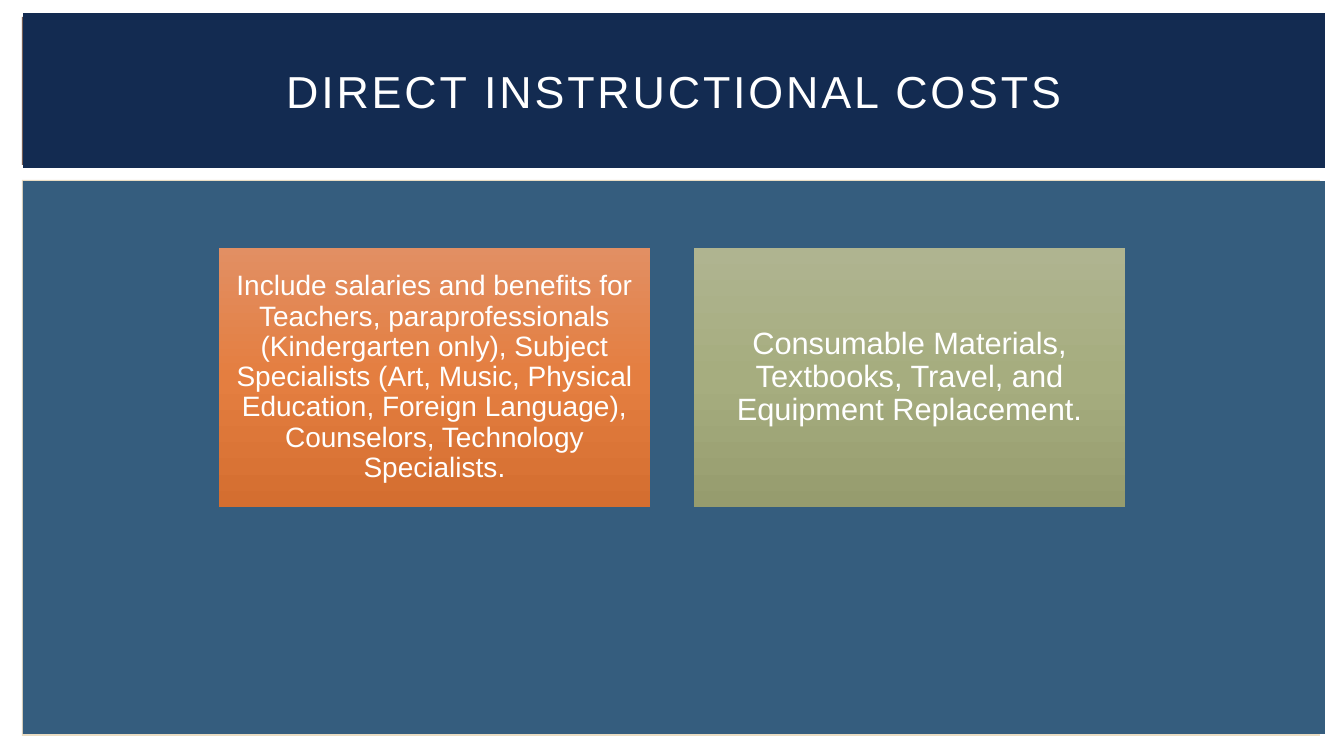
from copy import deepcopy

from pptx import Presentation
from pptx.dml.color import RGBColor
from pptx.enum.shapes import MSO_SHAPE
from pptx.enum.text import MSO_ANCHOR, MSO_AUTO_SIZE, PP_ALIGN
from pptx.util import Pt

RECT = MSO_SHAPE.RECTANGLE
MIDDLE = MSO_ANCHOR.MIDDLE
CENTER = PP_ALIGN.CENTER
NO_FIT = MSO_AUTO_SIZE.NONE

# Content
TITLE = "DIRECT INSTRUCTIONAL COSTS"
CARDS = [
    ("Include salaries and benefits for Teachers, paraprofessionals "
     "(Kindergarten only), Subject Specialists (Art, Music, Physical "
     "Education, Foreign Language), Counselors, Technology Specialists.",
     20, ("E28F63", "E47E40", "D46E30")),
    ("Consumable Materials, Textbooks, Travel, and Equipment Replacement.",
     22, ("AFB490", "A6AD7F", "969C6E")),
]
FONT, WHITE = "Arial", "FFFFFF"

# Layout in px: left, top, width, height
SLIDE = (1344, 756)
BACKS = [((22, 180, 1298, 556), "EBDDC3"),
         ((22, 17, 1295, 148), "775F55"),
         ((23, 181, 1302, 553), "355D7E")]
HEAD = (23, 13, 1302, 155)
CARD_X, CARD_Y, CARD_W, CARD_H, GAP = 219, 248, 431, 259, 44
PAD = 9


def px(n):
    return round(n * 914400 / 100.8)


def rgb(code):
    return RGBColor.from_string(code)


def add_box(box):
    shape = slide.shapes.add_shape(RECT, *map(px, box))
    shape.shadow.inherit = False
    shape.line.fill.background()
    return shape


def paint(shape, code):
    shape.fill.solid()
    shape.fill.fore_color.rgb = rgb(code)


def shade(shape, codes):
    """Fill from top to bottom with three evenly spaced colours."""
    fill = shape.fill
    fill.gradient()
    fill.gradient_angle = 270
    stops = shape._element.spPr.find(".//{*}gsLst")
    stops.append(deepcopy(stops[-1]))
    for i, (stop, code) in enumerate(zip(fill.gradient_stops, codes)):
        stop.position = i / 2
        stop.color.rgb = rgb(code)


def write(shape, text, size, pad):
    frame = shape.text_frame
    frame.word_wrap = True
    frame.auto_size = NO_FIT
    frame.vertical_anchor = MIDDLE
    frame.margin_left = frame.margin_right = px(pad)
    frame.margin_top = frame.margin_bottom = px(pad)
    para = frame.paragraphs[0]
    para.alignment = CENTER
    run = para.add_run()
    run.text = text
    run.font.name = FONT
    run.font.size = Pt(size)
    run.font.color.rgb = rgb(WHITE)
    return para, run


deck = Presentation()
deck.slide_width, deck.slide_height = map(px, SLIDE)
slide = deck.slides.add_slide(deck.slide_layouts[5])

# Background panels, kept behind the title
for i, (box, code) in enumerate(BACKS):
    panel = add_box(box)
    paint(panel, code)
    slide.shapes._spTree.insert(2 + i, panel._element)

# Title band
title = slide.shapes.title
title.left, title.top, title.width, title.height = map(px, HEAD)
paint(title, "132B51")
para, run = write(title, TITLE, 32, PAD)
run.font._element.set("spc", "200")

# Cost cards
for i, (text, size, codes) in enumerate(CARDS):
    left = CARD_X + i * (CARD_W + GAP)
    card = add_box((left, CARD_Y, CARD_W, CARD_H))
    shade(card, codes)
    para, run = write(card, text, size, PAD)
    para.line_spacing = 0.9

deck.save("out.pptx")
